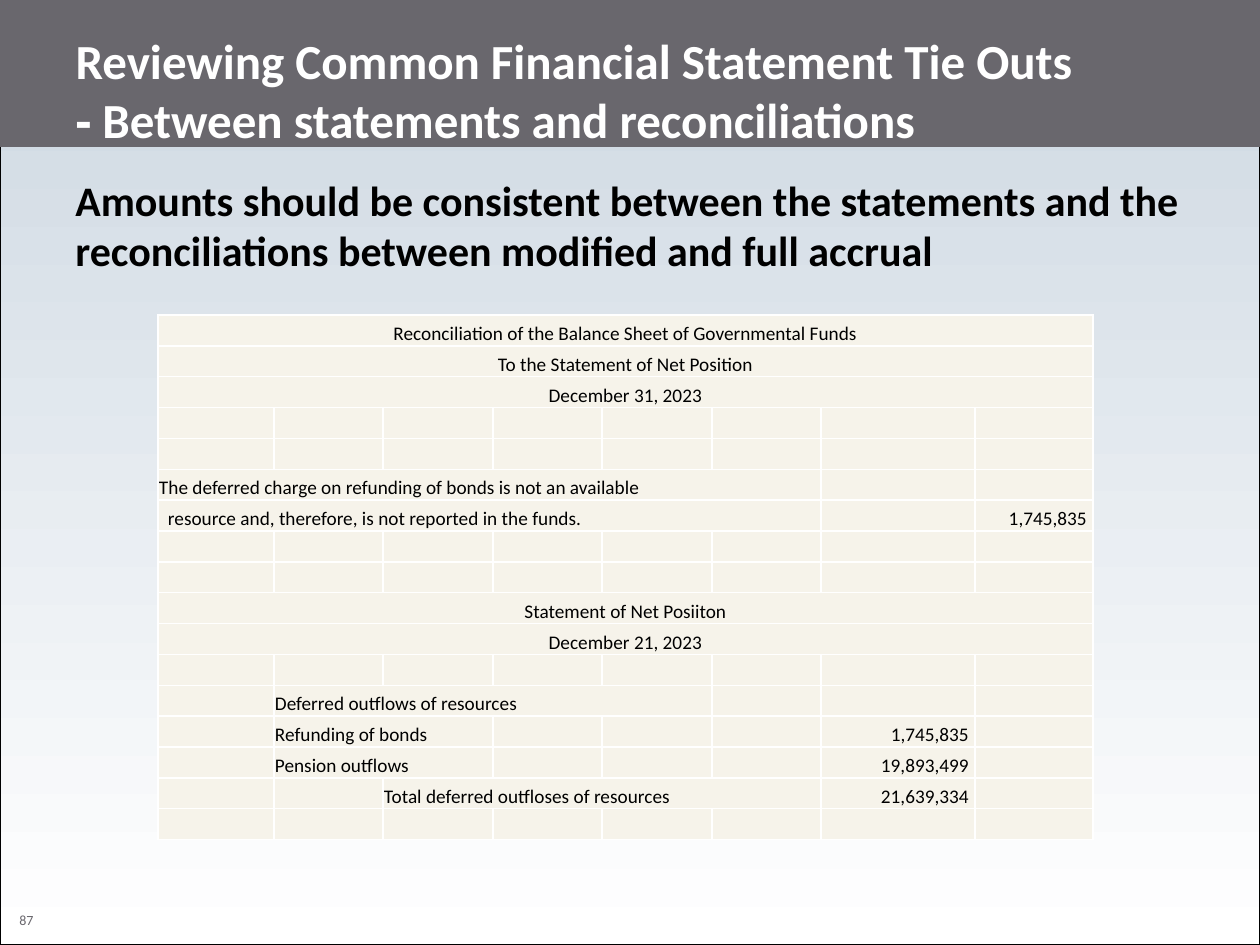
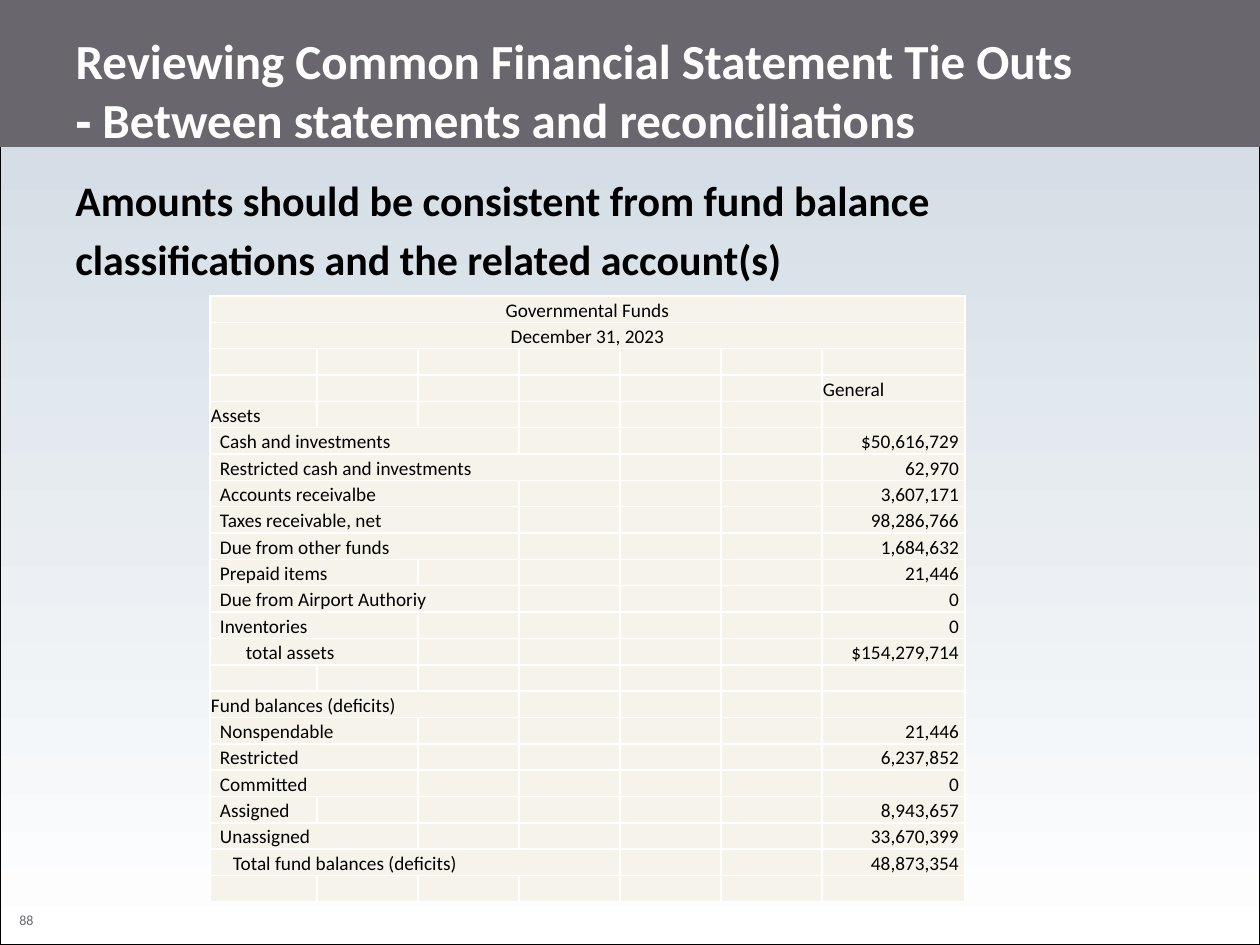
from lxml import etree
from pptx import Presentation
from pptx.dml.color import RGBColor
from pptx.enum.shapes import MSO_SHAPE as SHAPE
from pptx.enum.text import MSO_ANCHOR as ANCHOR, MSO_AUTO_SIZE as AUTO, PP_ALIGN as ALIGN
from pptx.oxml import parse_xml
from pptx.oxml.ns import nsdecls, qn
from pptx.util import Pt

FONT = "Calibri"
SLATE = RGBColor(0x69, 0x67, 0x6D)
MIST = RGBColor(0xCC, 0xD7, 0xE1)
CREAM = RGBColor(0xF6, 0xF3, 0xEA)
WHITE = RGBColor(0xFF, 0xFF, 0xFF)
BLACK = RGBColor(0, 0, 0)

EMU_PER_PX = 914400 / 126
SLIDE_W, SLIDE_H = 1260, 945
TITLE = "Reviewing Common Financial Statement Tie Outs\v‐ Between statements and reconciliations"

RECONCILIATION = {
    0: [(0, 8, "Reconciliation of the Balance Sheet of Governmental Funds", ALIGN.CENTER, 0)],
    1: [(0, 8, "To the Statement of Net Position", ALIGN.CENTER, 0)],
    2: [(0, 8, "December 31, 2023", ALIGN.CENTER, 0)],
    5: [(0, 6, "The deferred charge on refunding of bonds is not an available", ALIGN.LEFT, 0)],
    6: [(0, 6, "resource and, therefore, is not reported in the funds.", ALIGN.LEFT, 9),
        (7, 1, "1,745,835", ALIGN.RIGHT, 0)],
    9: [(0, 8, "Statement of Net Posiiton", ALIGN.CENTER, 0)],
    10: [(0, 8, "December 21, 2023", ALIGN.CENTER, 0)],
    12: [(1, 4, "Deferred outflows of resources", ALIGN.LEFT, 0)],
    13: [(1, 2, "Refunding of bonds", ALIGN.LEFT, 0), (6, 1, "1,745,835", ALIGN.RIGHT, 0)],
    14: [(1, 2, "Pension outflows", ALIGN.LEFT, 0), (6, 1, "19,893,499", ALIGN.RIGHT, 0)],
    15: [(2, 4, "Total deferred outfloses of resources", ALIGN.LEFT, 0),
         (6, 1, "21,639,334", ALIGN.RIGHT, 0)],
}

ACCOUNTS = {
    4: ("Assets", 1, 0, ""),
    5: ("Cash and investments", 3, 9, "$50,616,729"),
    6: ("Restricted cash and investments", 4, 9, "62,970"),
    7: ("Accounts receivalbe", 3, 9, "3,607,171"),
    8: ("Taxes receivable, net", 3, 9, "98,286,766"),
    9: ("Due from other funds", 3, 9, "1,684,632"),
    10: ("Prepaid items", 2, 9, "21,446"),
    11: ("Due from Airport Authoriy", 3, 9, "0"),
    12: ("Inventories", 2, 9, "0"),
    13: ("total assets", 2, 35, "$154,279,714"),
    15: ("Fund balances (deficits)", 3, 0, ""),
    16: ("Nonspendable", 2, 9, "21,446"),
    17: ("Restricted", 2, 9, "6,237,852"),
    18: ("Committed", 2, 9, "0"),
    19: ("Assigned", 1, 9, "8,943,657"),
    20: ("Unassigned", 2, 9, "33,670,399"),
    21: ("Total fund balances (deficits)", 4, 22, "48,873,354"),
}


def px(n):
    return round(n * EMU_PER_PX)


def box_emu(box):
    return [px(n) for n in box]


def put_text(tf, text, size=11, color=BLACK, bold=False, align=ALIGN.LEFT, gap=0):
    for i, line in enumerate(text.split("\n")):
        p = tf.add_paragraph() if i else tf.paragraphs[0]
        p.text = line
        p.alignment = align
        p.space_before = Pt(gap if i else 0)
        for r in p.runs:
            r.font.name, r.font.size, r.font.bold = FONT, Pt(size), bold
            r.font.color.rgb = color


def add_text(s, box, text, **style):
    tf = s.shapes.add_textbox(*box_emu(box)).text_frame
    tf.word_wrap = True
    put_text(tf, text, **style)


def add_rect(s, box, fill=None, line=None):
    sp = s.shapes.add_shape(SHAPE.RECTANGLE, *box_emu(box))
    sp.shadow.inherit = False
    if fill is None:
        sp.fill.background()
    else:
        sp.fill.solid()
        sp.fill.fore_color.rgb = fill
    if line is None:
        sp.line.fill.background()
    else:
        sp.line.color.rgb = line
        sp.line.width = Pt(0.75)


def set_background(prs):
    fill = prs.slide_master.background.fill
    fill.gradient()
    fill.gradient_angle = 270
    for stop, color, position in zip(fill.gradient_stops, (MIST, WHITE), (0, 1)):
        stop.color.rgb = color
        stop.position = position


def add_title(s, box, text):
    title = s.shapes.title
    title.left, title.top, title.width, title.height = box_emu(box)
    s.shapes._spTree.append(title._element)
    tf = title.text_frame
    tf.auto_size = AUTO.NONE
    tf.word_wrap = True
    tf.vertical_anchor = ANCHOR.MIDDLE
    put_text(tf, text, size=28, color=WHITE, bold=True)


def add_base(prs, number, statement):
    s = prs.slides.add_slide(prs.slide_layouts[5])
    add_rect(s, (0, 0, SLIDE_W, SLIDE_H), line=BLACK)
    add_text(s, (0, 905, 53, 30), number, size=8, color=SLATE, align=ALIGN.CENTER)
    add_rect(s, (0, 0, SLIDE_W, 147), fill=SLATE)
    add_title(s, (63, 42, 1134, 94), TITLE)
    add_text(s, (63, 168, 1134, 672), statement, size=24, bold=True, gap=5)
    return s


def format_cell(cell):
    cell.fill.solid()
    cell.fill.fore_color.rgb = CREAM
    cell.margin_left = cell.margin_top = px(1)
    cell.margin_right, cell.margin_bottom = px(6), 0
    cell.vertical_anchor = ANCHOR.BOTTOM
    tcPr = cell._tc.get_or_add_tcPr()
    for i, side in enumerate("LRTB"):
        tcPr.insert(i, parse_xml(
            f'<a:ln{side} {nsdecls("a")} w="12700"><a:solidFill>'
            f'<a:srgbClr val="{WHITE}"/></a:solidFill></a:ln{side}>'))
    p = cell.text_frame.paragraphs[0]
    etree.SubElement(p._p, qn("a:endParaRPr"), sz="1100")


def add_ledger(s, box, widths, n_rows, entries):
    table = s.shapes.add_table(n_rows, len(widths), *box_emu(box)).table
    table.first_row = table.horz_banding = False
    for col, width in zip(table.columns, widths):
        col.width = px(width)
    for row in table.rows:
        row.height = px(box[3]) // n_rows
    for cell in table.iter_cells():
        format_cell(cell)
    for row, items in entries.items():
        for col, span, text, align, indent in items:
            cell = table.cell(row, col)
            if span > 1:
                cell.merge(table.cell(row, col + span - 1))
            cell.margin_left = px(1 + indent)
            if align == ALIGN.CENTER:
                cell.margin_right = px(1)
            put_text(cell.text_frame, text, align=align)


def reconciliation_slide(prs):
    s = add_base(prs, "87", "Amounts should be consistent between the statements and the "
                 "reconciliations between modified and full accrual")
    widths = [116, 109, 110, 109, 110, 109, 154, 118]
    add_ledger(s, (158, 315, sum(widths), 525), widths, 17, RECONCILIATION)


def fund_balance_slide(prs):
    s = add_base(prs, "88", "Amounts should be consistent from fund balance\n"
                 "classifications and the related account(s)")
    widths = [107] + [101] * 5 + [143]
    entries = {
        0: [(0, 7, "Governmental Funds", ALIGN.CENTER, 0)],
        1: [(0, 7, "December 31, 2023", ALIGN.CENTER, 0)],
        3: [(6, 1, "General", ALIGN.LEFT, 0)],
    }
    for row, (label, span, indent, amount) in ACCOUNTS.items():
        entries[row] = [(0, span, label, ALIGN.LEFT, indent)]
        if amount:
            entries[row].append((6, 1, amount, ALIGN.RIGHT, 0))
    add_ledger(s, (210, 296, sum(widths), 606), widths, 23, entries)


def main():
    prs = Presentation()
    prs.slide_width, prs.slide_height = px(SLIDE_W), px(SLIDE_H)
    set_background(prs)
    reconciliation_slide(prs)
    fund_balance_slide(prs)
    prs.save("out.pptx")


if __name__ == "__main__":
    main()
